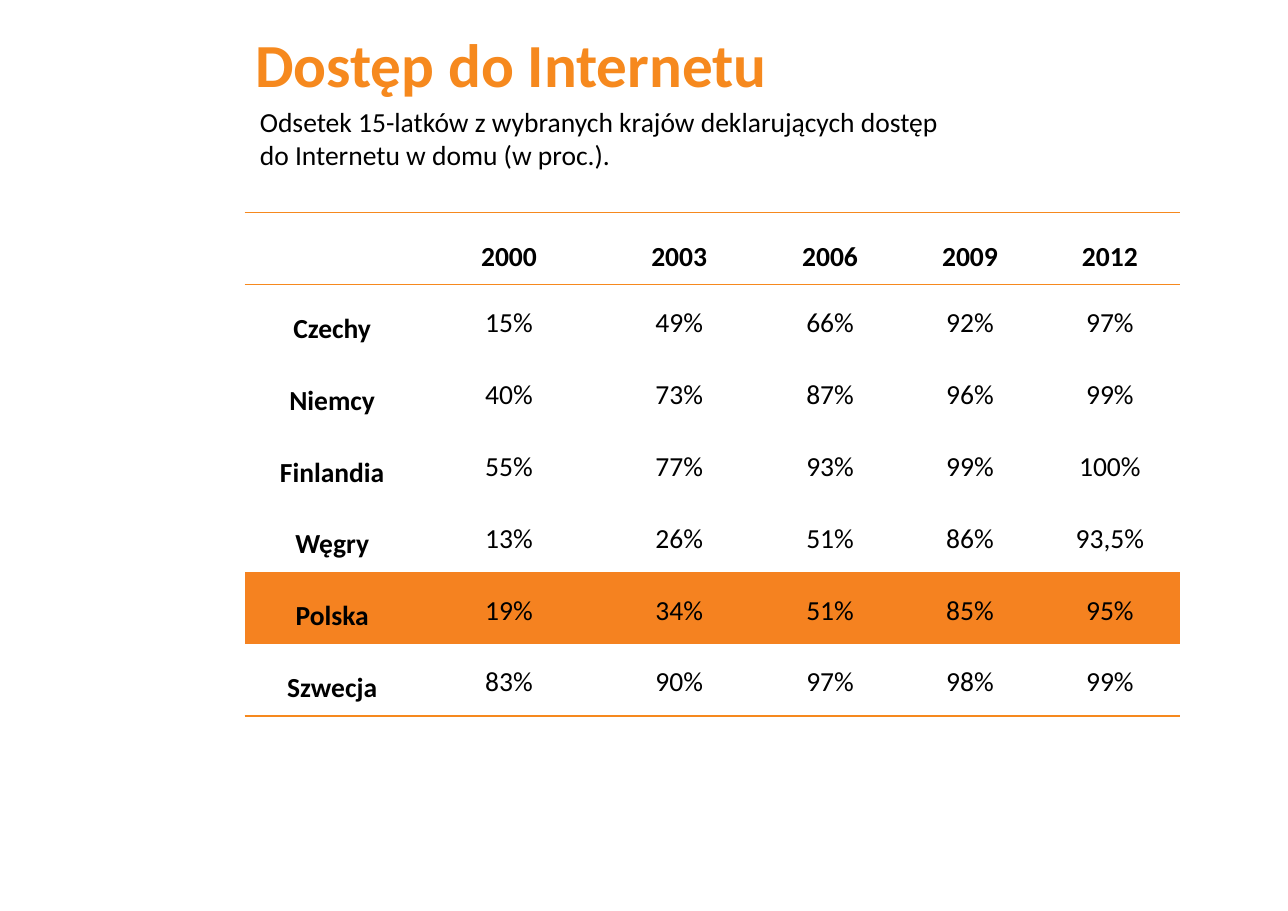
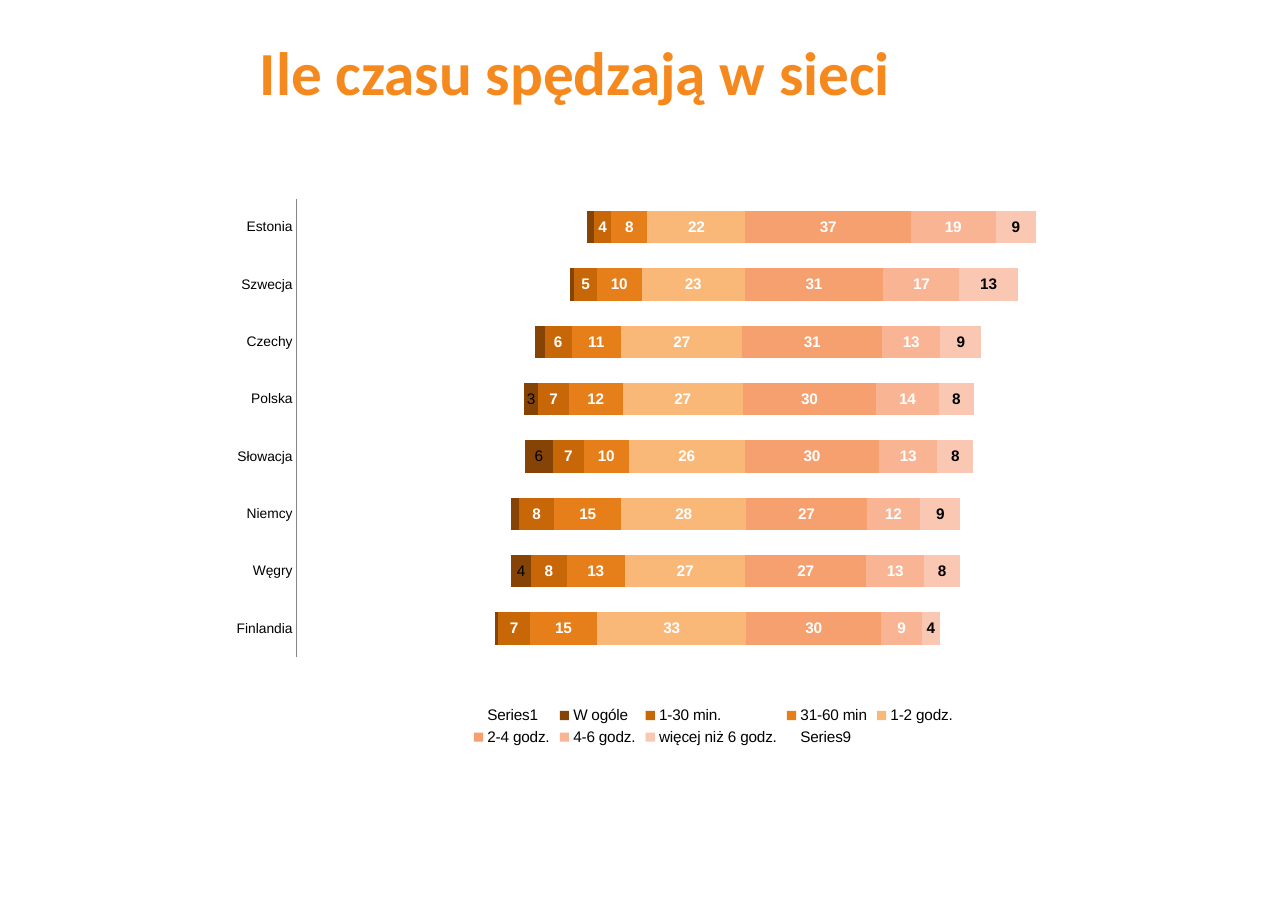
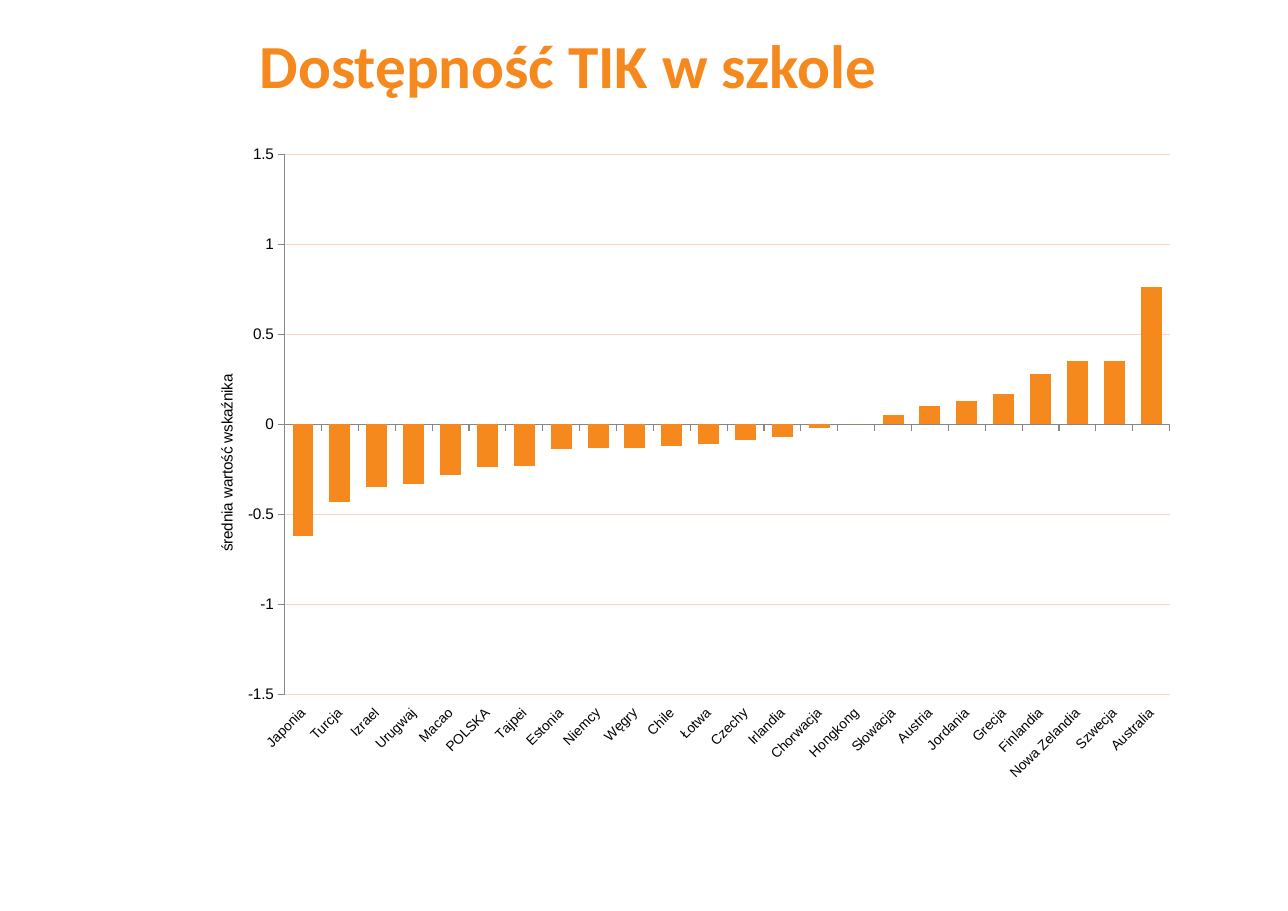
"""Build three slides on teenagers' access to the Internet and to ICT at school."""
from pptx import Presentation
from pptx.chart.data import CategoryChartData
from pptx.dml.color import RGBColor
from pptx.enum.chart import XL_CHART_TYPE, XL_LEGEND_POSITION, XL_TICK_LABEL_POSITION, XL_TICK_MARK
from pptx.enum.text import MSO_ANCHOR, PP_ALIGN
from pptx.oxml import parse_xml
from pptx.oxml.ns import nsdecls, qn
from pptx.util import Inches, Pt

STACKED = XL_CHART_TYPE.BAR_STACKED_100
COLUMN = XL_CHART_TYPE.COLUMN_CLUSTERED
BOTTOM = XL_LEGEND_POSITION.BOTTOM
NO_TEXT = XL_TICK_LABEL_POSITION.NONE
LOW = XL_TICK_LABEL_POSITION.LOW
NO_TICK = XL_TICK_MARK.NONE
CROSS = XL_TICK_MARK.CROSS
OUTSIDE = XL_TICK_MARK.OUTSIDE
MIDDLE = MSO_ANCHOR.MIDDLE
CENTER = PP_ALIGN.CENTER
PLAIN = "{2D5ABB26-0587-4C30-8999-92F81FD0307C}"

HEX = {
    "orange": "F6891E", "band": "F58220", "black": "000000", "white": "FFFFFF",
    "axis": "878787", "grid": "FFD3C2", "none": "854405", "half": "C76708",
    "hour": "E67F1A", "two": "FAB878", "four": "F7A06F", "six": "F9B494", "more": "FAC8B2",
}
RGB = {name: RGBColor.from_string(code) for name, code in HEX.items()}


def write(slide, text, left, top, width, height, size, color, bold):
    box = slide.shapes.add_textbox(Inches(left), Inches(top), Inches(width), Inches(height))
    box.text_frame.word_wrap = True
    para = box.text_frame.paragraphs[0]
    para.text = text
    para.font.name, para.font.size = "Calibri", Pt(size)
    para.font.bold, para.font.color.rgb = bold, RGB[color]


def place(parent, index, inner, **spots):
    for old in parent.findall(qn("c:layout")):
        parent.remove(old)
    target = '<c:layoutTarget val="inner"/>' if inner else ""
    modes = '<c:xMode val="edge"/><c:yMode val="edge"/>'
    sizes = "".join(f'<c:{key} val="{spot}"/>' for key, spot in spots.items())
    parent.insert(index, parse_xml(
        f'<c:layout {nsdecls("c")}><c:manualLayout>{target}{modes}{sizes}</c:manualLayout></c:layout>'))


deck = Presentation()
deck.slide_width, deck.slide_height = Inches(11.69), Inches(8.27)
titles = [
    ("Dostęp do Internetu", 2.22, 0.19, 9.47),
    ("Ile czasu spędzają w sieci", 2.26, 0.26, 8.43),
    ("Dostępność TIK w szkole", 2.26, 0.2, 8.74),
]
slides = []
for text, left, top, width in titles:
    slide = deck.slides.add_slide(deck.slide_layouts[6])
    write(slide, text, left, top, width, 0.77, 40, "orange", True)
    slides.append(slide)
access, time, school = slides

write(access, "Odsetek 15-latków z wybranych krajów deklarujących dostęp do Internetu w domu (w proc.).",
      2.26, 0.9, 6.61, 0.71, 18, "black", False)
rows = [
    ["", "2000", "2003", "2006", "2009", "2012"],
    ["Czechy", "15%", "49%", "66%", "92%", "97%"],
    ["Niemcy", "40%", "73%", "87%", "96%", "99%"],
    ["Finlandia", "55%", "77%", "93%", "99%", "100%"],
    ["Węgry", "13%", "26%", "51%", "86%", "93,5%"],
    ["Polska", "19%", "34%", "51%", "85%", "95%"],
    ["Szwecja", "83%", "90%", "97%", "98%", "99%"],
]
edges = {0: ["lnB", "lnT"], len(rows) - 1: ["lnB"]}
table = access.shapes.add_table(len(rows), 6, Inches(2.22), Inches(1.93), Inches(8.5), Inches(4.57)).table
table.first_row = table.horz_banding = False
table._tbl.tblPr.find(qn("a:tableStyleId")).text = PLAIN
for col, width in zip(table.columns, [1.59, 1.62, 1.47, 1.27, 1.27, 1.27]):
    col.width = Inches(width)
for r, row in enumerate(rows):
    for c, text in enumerate(row):
        cell = table.cell(r, c)
        head = r == 0 or c == 0
        cell.vertical_anchor = MIDDLE
        cell.margin_left = cell.margin_right = Inches(0.07)
        cell.margin_top = cell.margin_bottom = 0
        if row[0] == "Polska":
            cell.fill.solid()
            cell.fill.fore_color.rgb = RGB["band"]
        else:
            cell.fill.background()
        para = cell.text_frame.paragraphs[0]
        para.text, para.alignment = text, CENTER
        para.line_spacing, para.space_before = 1.5 if head else 1.15, Pt(6)
        para.font.name, para.font.size = "Calibri", Pt(18)
        para.font.bold, para.font.color.rgb = head, RGB["black"]
        for edge in edges.get(r, []):
            cell._tc.get_or_add_tcPr().insert(0, parse_xml(
                f'<a:{edge} {nsdecls("a")} w="12700"><a:solidFill>'
                f'<a:srgbClr val="{HEX["orange"]}"/></a:solidFill></a:{edge}>'))

spans = [
    ("Series1", [44, 48, 48, 51, 51, 53, 61, 65], None, None),
    ("W ogóle", [0.65, 4.35, 1.69, 6.15, 3.15, 2.08, 0.99, 1.42], "none", None),
    ("1-30 min.", [7, 8, 8, 7, 7, 6, 5, 4], "half", "white"),
    ("31-60 min", [15, 13, 15, 10, 12, 11, 10, 8], "hour", "white"),
    ("1-2 godz.", [33, 27, 28, 26, 27, 27, 23, 22], "two", "white"),
    ("2-4 godz.", [30, 27, 27, 30, 30, 31, 31, 37], "four", "white"),
    ("4-6 godz.", [9, 13, 12, 13, 14, 13, 17, 19], "six", "white"),
    ("więcej niż 6 godz.", [4, 8, 9, 8, 8, 9, 13, 9], "more", "black"),
    ("Series9", [56, 52, 52, 49, 49, 47, 39, 35], None, None),
]
hours = CategoryChartData(number_format="0")
hours.categories = ["Finlandia", "Węgry", "Niemcy", "Słowacja", "Polska", "Czechy", "Szwecja", "Estonia"]
for name, vals, fill, ink in spans:
    hours.add_series(name, vals)

scores = {
    "Japonia": -0.62, "Turcja": -0.43, "Izrael": -0.35, "Urugwaj": -0.33, "Macao": -0.28,
    "POLSKA": -0.24, "Tajpei": -0.23, "Estonia": -0.14, "Niemcy": -0.13, "Węgry": -0.13,
    "Chile": -0.12, "Łotwa": -0.11, "Czechy": -0.09, "Irlandia": -0.07, "Chorwacja": -0.02,
    "Hongkong": 0, "Słowacja": 0.05, "Austria": 0.1, "Jordania": 0.13, "Grecja": 0.17,
    "Finlandia": 0.28, "Nowa Zelandia": 0.35, "Szwecja": 0.35, "Australia": 0.76,
}
means = CategoryChartData()
means.categories = list(scores)
means.add_series("Series 1", list(scores.values()))

charts = []
for slide, kind, data, box, gap, spots in [
    (time, STACKED, hours, (1.75, 1.54, 9.45, 5.27), 78, {"x": 0.1, "y": 0.05, "w": 0.86, "h": 0.79}),
    (school, COLUMN, means, (1.67, 1.22, 9.13, 5.98), 76, {"x": 0.1, "y": 0.03, "w": 0.88, "h": 0.82}),
]:
    chart = slide.shapes.add_chart(kind, *map(Inches, box), data).chart
    chart.has_title = False
    chart.font.name, chart.font.size, chart.font.color.rgb = "Arial", Pt(10), RGB["black"]
    chart.plots[0].gap_width = gap
    chart.plots[0].vary_by_categories = False
    place(chart._chartSpace.chart.plotArea, 0, True, **spots)
    for axis in (chart.category_axis, chart.value_axis):
        axis.format.line.color.rgb = RGB["axis"]
        axis.format.line.width = Pt(0.75)
        axis.minor_tick_mark = NO_TICK
    chart.category_axis.tick_labels.font.size = Pt(9)
    charts.append(chart)
bars, cols = charts

bars.plots[0].overlap = 100
bars.has_legend = True
bars.legend.position = BOTTOM
bars.legend.include_in_layout = True
bars.category_axis.major_tick_mark = NO_TICK
scale = bars.value_axis
scale.has_major_gridlines = False
scale.major_tick_mark = NO_TICK
scale.tick_label_position = NO_TEXT
scale.format.line.fill.background()
for series, (name, vals, fill, ink) in zip(bars.plots[0].series, spans):
    if fill:
        series.format.fill.solid()
        series.format.fill.fore_color.rgb = RGB[fill]
    else:
        series.format.fill.background()
    if ink:
        tags = series.data_labels
        tags.show_value = True
        tags.number_format, tags.number_format_is_linked = "#,##0", False
        tags.font.size, tags.font.bold, tags.font.color.rgb = Pt(10), True, RGB[ink]
    elif fill:
        for point, val in enumerate(vals):
            if val > 3:
                series.points[point].data_label.font.size = Pt(10)
        series.data_labels.show_value = False

base, scale = cols.category_axis, cols.value_axis
cols.has_legend = False
base.tick_label_position = LOW
base.major_tick_mark = OUTSIDE
base._element.txPr.bodyPr.set("rot", "-2700000")
scale.major_tick_mark = OUTSIDE
scale.minimum_scale, scale.maximum_scale, scale.major_unit = -1.5, 1.5, 0.5
scale.tick_labels.number_format, scale.tick_labels.number_format_is_linked = "General", False
scale.major_gridlines.format.line.color.rgb = RGB["grid"]
scale.major_gridlines.format.line.width = Pt(0.75)
label = scale.axis_title.text_frame
label.text = "średnia wartość wskaźnika"
label.paragraphs[0].font.size, label.paragraphs[0].font.bold = Pt(10), False
label._txBody.bodyPr.set("rot", "-5400000")
place(scale.axis_title._element, 1, False, x=0.03, y=0.36)
series = cols.plots[0].series[0]
series.invert_if_negative = False
series.format.fill.solid()
series.format.fill.fore_color.rgb = RGB["orange"]

deck.save("out.pptx")
